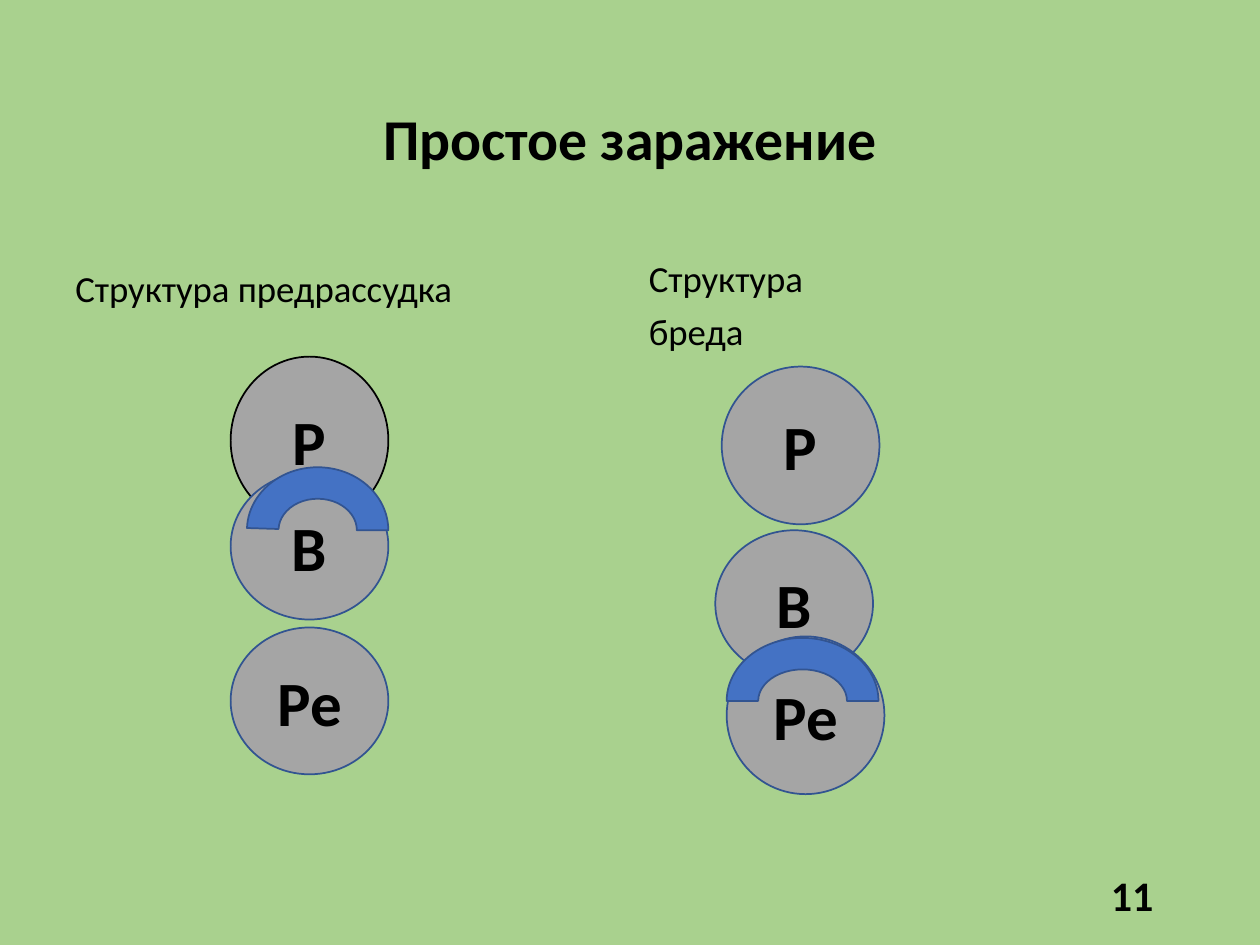
from pptx import Presentation
from pptx import util as u
from pptx.dml.color import RGBColor
from pptx.enum import shapes, text

GREEN = RGBColor(0xA9, 0xD1, 0x8E)
GREY = RGBColor(0xA5, 0xA5, 0xA5)
BLUE = RGBColor(0x44, 0x72, 0xC4)
NAVY = RGBColor(0x32, 0x54, 0x91)
BLACK = RGBColor(0, 0, 0)
DIAMETER = 3.18


class SlideBuilder:
    """Holds the style and the current slide."""

    font_name = "Calibri"

    def __init__(self, presentation):
        self.slide = presentation.slides.add_slide(presentation.slide_layouts[5])
        self.slide.background.fill.solid()
        self.slide.background.fill.fore_color.rgb = GREEN

    def set_text(self, shape, lines, size, bold=False, align=text.PP_ALIGN.LEFT,
                 anchor=text.MSO_ANCHOR.MIDDLE, line_spacing=1.0, space_before=0):
        frame = shape.text_frame
        frame.text = "\n".join(lines)
        frame.word_wrap = True
        frame.vertical_anchor = anchor
        for paragraph in frame.paragraphs:
            paragraph.alignment = align
            paragraph.line_spacing = line_spacing
            paragraph.space_before = u.Pt(space_before)
            paragraph.font.name = self.font_name
            paragraph.font.size = u.Pt(size)
            paragraph.font.bold = bold
            paragraph.font.color.rgb = BLACK

    def title(self, wording, left, top, width, height):
        title = self.slide.shapes.title
        title.left, title.top = u.Cm(left), u.Cm(top)
        title.width, title.height = u.Cm(width), u.Cm(height)
        self.set_text(title, [wording], 33, True, text.PP_ALIGN.CENTER, line_spacing=0.9)

    def text_box(self, lines, left, top, width, height, size, **style):
        box = self.slide.shapes.add_textbox(u.Cm(left), u.Cm(top), u.Cm(width), u.Cm(height))
        self.set_text(box, lines, size, **style)

    def heading(self, lines, left, top):
        self.text_box(lines, left, top, 11.23, 11.8, 21, anchor=text.MSO_ANCHOR.TOP,
                      line_spacing=0.9, space_before=7.5)

    def shape(self, kind, left, top, width, height, fill, line=NAVY):
        shape = self.slide.shapes.add_shape(kind, u.Cm(left), u.Cm(top), u.Cm(width), u.Cm(height))
        shape.shadow.inherit = False
        shape.fill.solid()
        shape.fill.fore_color.rgb = fill
        shape.line.color.rgb = line
        shape.line.width = u.Pt(1)
        return shape

    def circle(self, label, left, top, height, line=NAVY):
        circle = self.shape(shapes.MSO_SHAPE.OVAL, left, top, DIAMETER, height, GREY, line)
        self.set_text(circle, [label], 36, True, text.PP_ALIGN.CENTER)

    def arc(self, left, top, width, start_angle=108):
        arc = self.shape(shapes.MSO_SHAPE.BLOCK_ARC, left, top, width, 2.54, BLUE)
        arc.adjustments[0] = start_angle
        arc.adjustments[1] = 0
        arc.adjustments[2] = 0.25


def main():
    presentation = Presentation()
    presentation.slide_width, presentation.slide_height = u.Cm(25.4), u.Cm(19.05)
    builder = SlideBuilder(presentation)
    builder.title("Простое заражение", 1.75, 1.02, 21.9, 3.68)
    builder.heading(["Структура предрассудка"], 1.27, 5.33)
    builder.heading(["Структура", "бреда"], 12.83, 5.13)
    builder.text_box(["11"], 17.78, 17.53, 5.72, 1.02, 24, bold=True, align=text.PP_ALIGN.RIGHT)

    for label, left, top, height, line in (
        ("Р", 4.65, 7.19, 3.38, BLACK),
        ("В", 4.65, 9.53, 2.96, NAVY),
        ("Ре", 4.65, 12.65, 2.96, NAVY),
        ("Р", 14.55, 7.39, DIAMETER, NAVY),
        ("В", 14.42, 10.69, 2.96, NAVY),
        ("Ре", 14.65, 12.83, DIAMETER, NAVY),
    ):
        builder.circle(label, left, top, height, line)

    builder.arc(4.98, 9.42, 2.85, 109.08)
    builder.arc(14.65, 12.86, 3.06)
    presentation.save("out.pptx")


if __name__ == "__main__":
    main()
